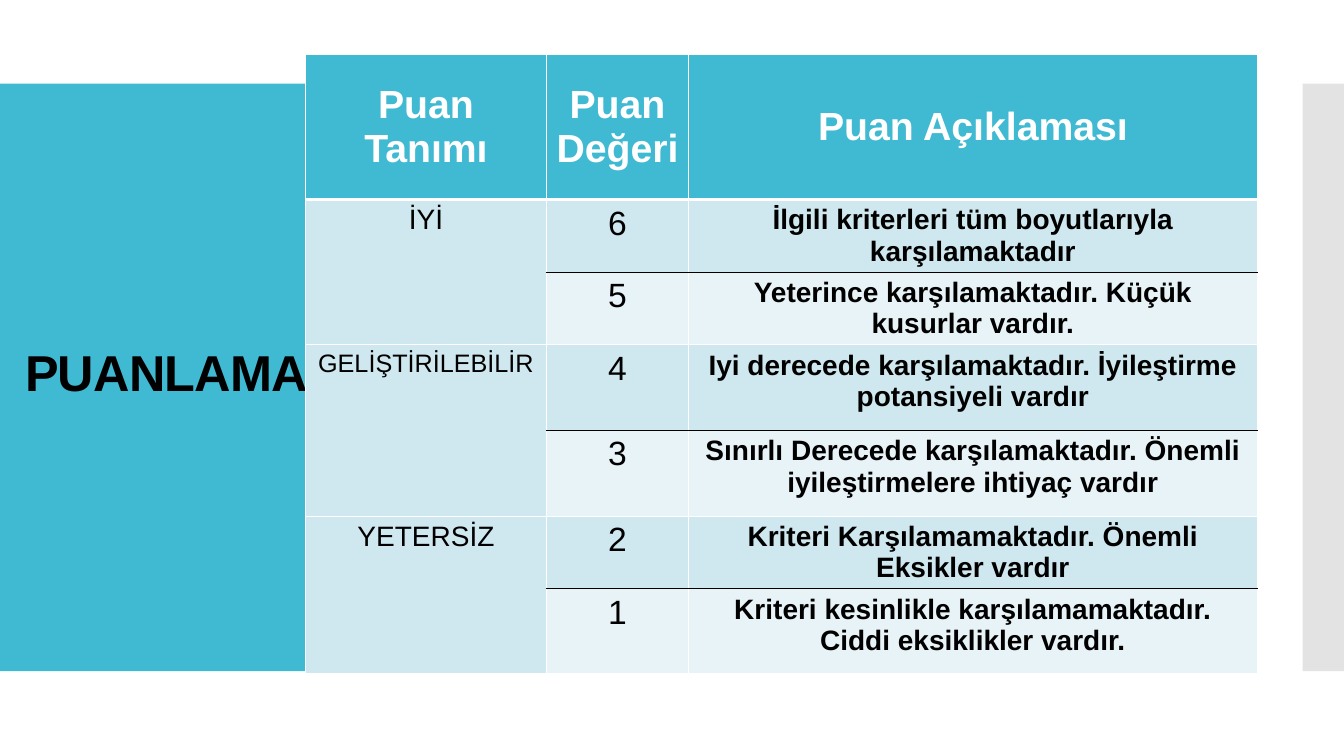
import pptx
import pptx.util
import pptx.dml.color
import pptx.enum.shapes
import pptx.enum.text
import pptx.oxml
import pptx.oxml.ns
import lxml.etree

# Content
TITLE = "PUANLAMA"
HEADERS = ["Puan Tanımı", "Puan Değeri", "Puan Açıklaması"]
# Each group: definition, its text size, two (score, description) rows
GROUPS = [
    ("İYİ", 20, [
        ("6", "İlgili kriterleri tüm boyutlarıyla karşılamaktadır"),
        ("5", "Yeterince karşılamaktadır. Küçük kusurlar vardır."),
    ]),
    ("GELİŞTİRİLEBİLİR", 18, [
        ("4", "Iyi derecede karşılamaktadır. İyileştirme potansiyeli vardır"),
        ("3", "Sınırlı Derecede karşılamaktadır. Önemli iyileştirmelere ihtiyaç vardır"),
    ]),
    ("YETERSİZ", 20, [
        ("2", "Kriteri Karşılamamaktadır. Önemli Eksikler vardır"),
        ("1", "Kriteri kesinlikle karşılamamaktadır. Ciddi eksiklikler vardır."),
    ]),
]

# Layout in inches
COLUMNS = [2.39, 1.41, 5.64]
ROWS = [1.44, 0.72, 0.72, 0.85, 0.85, 0.72, 0.84]
TABLE_LEFT, TABLE_TOP = 3.03, 0.54
BAND_TOP, BAND_HEIGHT = 0.83, 5.83
FONT = "Arial"
TEAL, BLACK, WHITE = "40BAD2", "000000", "FFFFFF"
ROW_FILLS = ["CFE7EE", "E8F3F7"]

inches = pptx.util.Inches
ALIGN = pptx.enum.text.PP_ALIGN
ANCHOR = pptx.enum.text.MSO_ANCHOR


def color(value):
    return pptx.dml.color.RGBColor.from_string(value)


def format_text(text_frame, size, font_color, bold):
    for paragraph in text_frame.paragraphs:
        for run in paragraph.runs:
            run.font.name = FONT
            run.font.size = pptx.util.Pt(size)
            run.font.bold = bold
            run.font.color.rgb = color(font_color)


def set_borders(cell, top=(WHITE, 1), bottom=(WHITE, 1)):
    properties = cell._tc.get_or_add_tcPr()
    sides = {"L": (WHITE, 1), "R": (WHITE, 1), "T": top, "B": bottom}
    for side, (line_color, width) in sides.items():
        properties.append(pptx.oxml.parse_xml(
            f'<a:ln{side} {pptx.oxml.ns.nsdecls("a")} w="{width * 12700}">'
            f'<a:solidFill><a:srgbClr val="{line_color}"/></a:solidFill></a:ln{side}>'))


def fill_cell(cell, text, size, fill, font_color=BLACK, bold=False, anchor=ANCHOR.TOP, **borders):
    cell.text_frame.text = text
    cell.text_frame.paragraphs[0].alignment = ALIGN.CENTER
    cell.vertical_anchor = anchor
    format_text(cell.text_frame, size, font_color, bold)
    set_borders(cell, **borders)
    cell.fill.solid()
    cell.fill.fore_color.rgb = color(fill)


presentation = pptx.Presentation()
presentation.slide_width, presentation.slide_height = inches(13.33), inches(7.5)
slide = presentation.slides.add_slide(presentation.slide_layouts[5])

# Side bands, behind the title
title = slide.shapes.title
for left, width, fill, alpha in [(0, 3.77, TEAL, 100), (12.92, 0.41, "C8C8C8", 50)]:
    band = slide.shapes.add_shape(pptx.enum.shapes.MSO_SHAPE.RECTANGLE, inches(left),
                                  inches(BAND_TOP), inches(width), inches(BAND_HEIGHT))
    band.shadow.inherit = False
    band.line.fill.background()
    band.fill.solid()
    band.fill.fore_color.rgb = color(fill)
    if alpha < 100:
        fill_value = band.element.spPr.find(".//" + pptx.oxml.ns.qn("a:srgbClr"))
        lxml.etree.SubElement(fill_value, pptx.oxml.ns.qn("a:alpha"), val=str(alpha * 1000))
    title.element.addprevious(band.element)

# Title
title.left, title.top, title.width, title.height = map(inches, (0.15, 1.21, 3.33, 5.03))
title.text_frame.text = TITLE
title.text_frame.word_wrap = True
title.text_frame.vertical_anchor = ANCHOR.MIDDLE
title_paragraph = title.text_frame.paragraphs[0]
title_paragraph.alignment = ALIGN.LEFT
title_paragraph.line_spacing = 0.9
format_text(title.text_frame, 36, BLACK, True)
title_paragraph.runs[0].font._element.set("spc", "-60")

# Table grid
table = slide.shapes.add_table(len(ROWS), len(COLUMNS), inches(TABLE_LEFT), inches(TABLE_TOP),
                               inches(sum(COLUMNS)), inches(sum(ROWS))).table
for column, width in zip(table.columns, COLUMNS):
    column.width = inches(width)
for row, height in zip(table.rows, ROWS):
    row.height = inches(height)

# Header row
for index, header in enumerate(HEADERS):
    fill_cell(table.cell(0, index), header, 28, TEAL, WHITE, True, ANCHOR.MIDDLE,
              bottom=(WHITE, 3))

# Score groups, two rows each, split by a black line
for group, (definition, size, scores) in enumerate(GROUPS):
    first_row = 1 + group * len(scores)
    definition_cell = table.cell(first_row, 0)
    definition_cell.merge(table.cell(first_row + 1, 0))
    top_line = (WHITE, 1 if group else 3)
    fill_cell(definition_cell, definition, size, ROW_FILLS[0], top=top_line)
    set_borders(table.cell(first_row + 1, 0))
    for offset, (score, description) in enumerate(scores):
        borders = {"top": (BLACK, 1)} if offset else {"top": top_line, "bottom": (BLACK, 1)}
        row = first_row + offset
        fill_cell(table.cell(row, 1), score, 24, ROW_FILLS[offset], **borders)
        fill_cell(table.cell(row, 2), description, 20, ROW_FILLS[offset], bold=True, **borders)

presentation.save("out.pptx")
